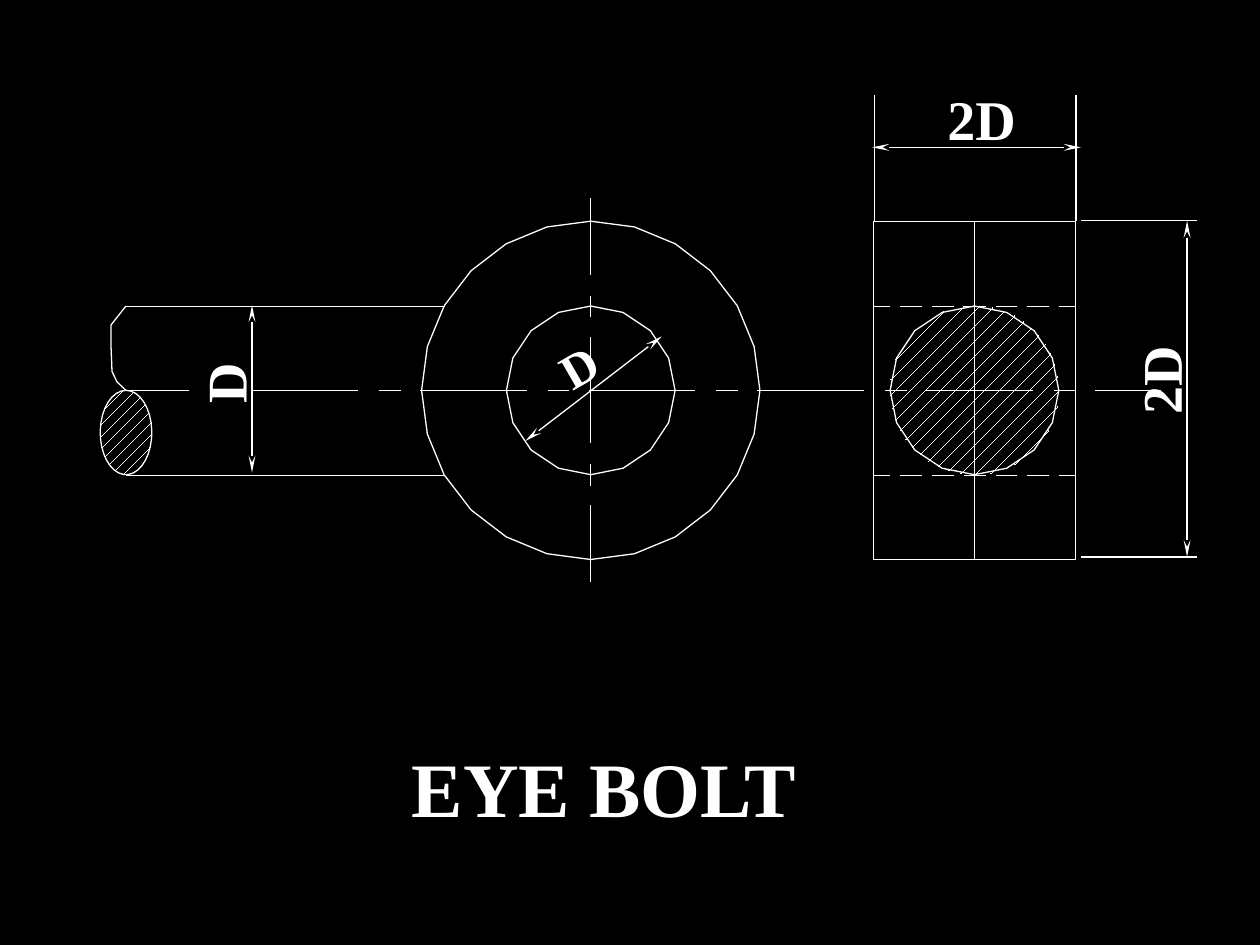
from math import cos, pi, sin, sqrt

from pptx import Presentation
from pptx.dml.color import RGBColor
from pptx.enum.shapes import MSO_CONNECTOR as CONN
from pptx.enum.text import MSO_AUTO_SIZE as AUTO, PP_ALIGN as ALIGN
from pptx.oxml.ns import qn
from pptx.util import Cm, Pt
from lxml.etree import SubElement

BLACK = RGBColor(0x00, 0x00, 0x00)
WHITE = RGBColor(0xFF, 0xFF, 0xFF)
HAIRLINE, DIM_WIDTH = Pt(0), Pt(0.75)
FONT = {"name": "Times New Roman", "bold": True}
ARROW = {"type": "stealth", "w": "sm", "len": "lg"}

CENTER_Y = 7.87
EYE_X = 11.91
EYE_R, HOLE_R = 3.41, 1.7
SHAFT_X, SHAFT_RX, SHAFT_RY = 2.54, 0.52, 0.85
SHAFT_TOP, SHAFT_BOTTOM, SHAFT_END = 6.17, 9.58, 8.97
SIDE_L, SIDE_R, SIDE_T, SIDE_B = 17.6, 21.69, 4.46, 11.28
SIDE_X = (SIDE_L + SIDE_R) / 2
BREAK_LINE = [(2.54, 7.87), (2.36, 7.7), (2.26, 7.49), (2.24, 7.01),
              (2.24, 6.55), (2.54, 6.17)]

CHAIN, CHAIN_PERIOD = [(0, 2.13), (2.57, 0.42)], 3.4
HIDDEN, HIDDEN_PERIOD = [(0, 0.42)], 0.64

DIMENSIONS = [
    (10.59, 8.89, 13.34, 6.78),
    (5.08, 6.15, 5.08, 9.53),
    (23.93, 4.45, 23.93, 11.23),
    (17.58, 2.97, 21.79, 2.97),
]
EXTENSIONS = [
    (21.79, 4.45, 24.13, 4.45),
    (21.79, 11.23, 24.13, 11.23),
    (17.63, 4.45, 17.63, 1.91),
    (21.69, 4.45, 21.69, 1.91),
]
LABELS = [
    ("D", 11.05, 6.65, 1.22, 1.45, 28, 330),
    ("D", 3.86, 6.93, 1.32, 1.6, 32, 270),
    ("2D", 22.39, 6.82, 1.96, 1.6, 32, 270),
    ("2D", 18.85, 1.57, 1.96, 1.6, 32, 0),
]


def dashes(start, end, first, pattern, period):
    count = int((end - first) / period) + 1
    for k in range(count):
        for offset, length in pattern:
            a = first + k * period + offset
            lo, hi = max(a, start), min(a + length, end)
            if lo < hi:
                yield lo, hi


class Drawing:
    def __init__(self, slide, color):
        self.slide = slide
        self.shapes = slide.shapes
        self.color = color

    def stroke(self, sp, width=HAIRLINE):
        sp.line.color.rgb = self.color
        sp.line.width = width

    def line(self, x1, y1, x2, y2, width=HAIRLINE, arrows=False):
        cx = self.shapes.add_connector(CONN.STRAIGHT, Cm(x1), Cm(y1), Cm(x2), Cm(y2))
        el = cx._element
        el.remove(el.find(qn("p:style")))
        self.stroke(cx, width)
        if arrows:
            ln = el.spPr.find(qn("a:ln"))
            for end in ("a:headEnd", "a:tailEnd"):
                SubElement(ln, qn(end), ARROW)
        SubElement(el.spPr, qn("a:effectLst"))

    def outline(self, points, close=False):
        pts = [(Cm(x), Cm(y)) for x, y in points]
        fb = self.shapes.build_freeform(*pts[0], scale=1.0)
        fb.add_line_segments(pts[1:], close=close)
        sp = fb.convert_to_shape()
        sp.fill.background()
        sp.shadow.inherit = False
        self.stroke(sp)

    def oval(self, cx, cy, rx, ry, sides):
        angles = [2 * pi * i / sides for i in range(sides)]
        self.outline([(cx + rx * sin(a), cy - ry * cos(a)) for a in angles], True)

    def hatch(self, cx, cy, rx, ry, first, step, count):
        r2 = rx ** 2 + ry ** 2
        for i in range(count):
            d = first + i * step
            mid = rx ** 2 * d / r2
            half = rx * ry * sqrt(r2 - d ** 2) / r2
            x1, x2 = mid - half, mid + half
            self.line(cx + x1, cy + d - x1, cx + x2, cy + d - x2)

    def text(self, words, left, top, width, height, size, rotation=0,
             wrap=False, align=None):
        sp = self.shapes.add_textbox(Cm(left), Cm(top), Cm(width), Cm(height))
        sp.rotation = rotation
        tf = sp.text_frame
        tf.word_wrap = wrap
        tf.auto_size = AUTO.SHAPE_TO_FIT_TEXT
        p = tf.paragraphs[0]
        p.alignment = align
        r = p.add_run()
        r.text = words
        for key, value in {**FONT, "size": Pt(size)}.items():
            setattr(r.font, key, value)
        r.font.color.rgb = self.color


def draw_front_view(d):
    for y in (SHAFT_TOP, SHAFT_BOTTOM):
        d.line(SHAFT_X, y, SHAFT_END, y)
    for a, b in dashes(SHAFT_X, 23.39, 1.68, CHAIN, CHAIN_PERIOD):
        d.line(a, CENTER_Y, b, CENTER_Y)
    section = (SHAFT_X, CENTER_Y + SHAFT_RY, SHAFT_RX, SHAFT_RY)
    d.oval(*section, 33)
    d.outline(BREAK_LINE)
    d.hatch(*section, -0.9, 0.24, 8)
    d.oval(EYE_X, CENTER_Y, EYE_R, EYE_R, 24)
    d.oval(EYE_X, CENTER_Y, HOLE_R, HOLE_R, 16)
    for a, b in dashes(4.01, 11.73, 3.4, CHAIN, CHAIN_PERIOD):
        d.line(EYE_X, a, EYE_X, b)


def draw_side_view(d):
    for y in (SIDE_T, SIDE_B):
        d.line(SIDE_L, y, SIDE_R, y)
    for x in (SIDE_R, SIDE_L, SIDE_X):
        d.line(x, SIDE_T, x, SIDE_B)
    for y in (SHAFT_TOP, SHAFT_BOTTOM):
        for a, b in dashes(SIDE_L, SIDE_R, 17.52, HIDDEN, HIDDEN_PERIOD):
            d.line(a, y, b, y)
    section = (SIDE_X, CENTER_Y, HOLE_R, HOLE_R)
    d.oval(*section, 16)
    d.hatch(*section, -2.2, 0.3, 16)


def main():
    prs = Presentation()
    prs.slide_width, prs.slide_height = Cm(25.4), Cm(19.05)
    s = prs.slides.add_slide(prs.slide_layouts[6])
    s.background.fill.solid()
    s.background.fill.fore_color.rgb = BLACK
    d = Drawing(s, WHITE)
    draw_front_view(d)
    draw_side_view(d)
    d.text("EYE BOLT", 1.7, 14.81, 20.96, 2.11, 44, wrap=True, align=ALIGN.CENTER)
    for ends in DIMENSIONS:
        d.line(*ends, DIM_WIDTH, arrows=True)
    for ends in EXTENSIONS:
        d.line(*ends, DIM_WIDTH)
    for label in LABELS:
        d.text(*label)
    prs.save("out.pptx")


if __name__ == "__main__":
    main()
